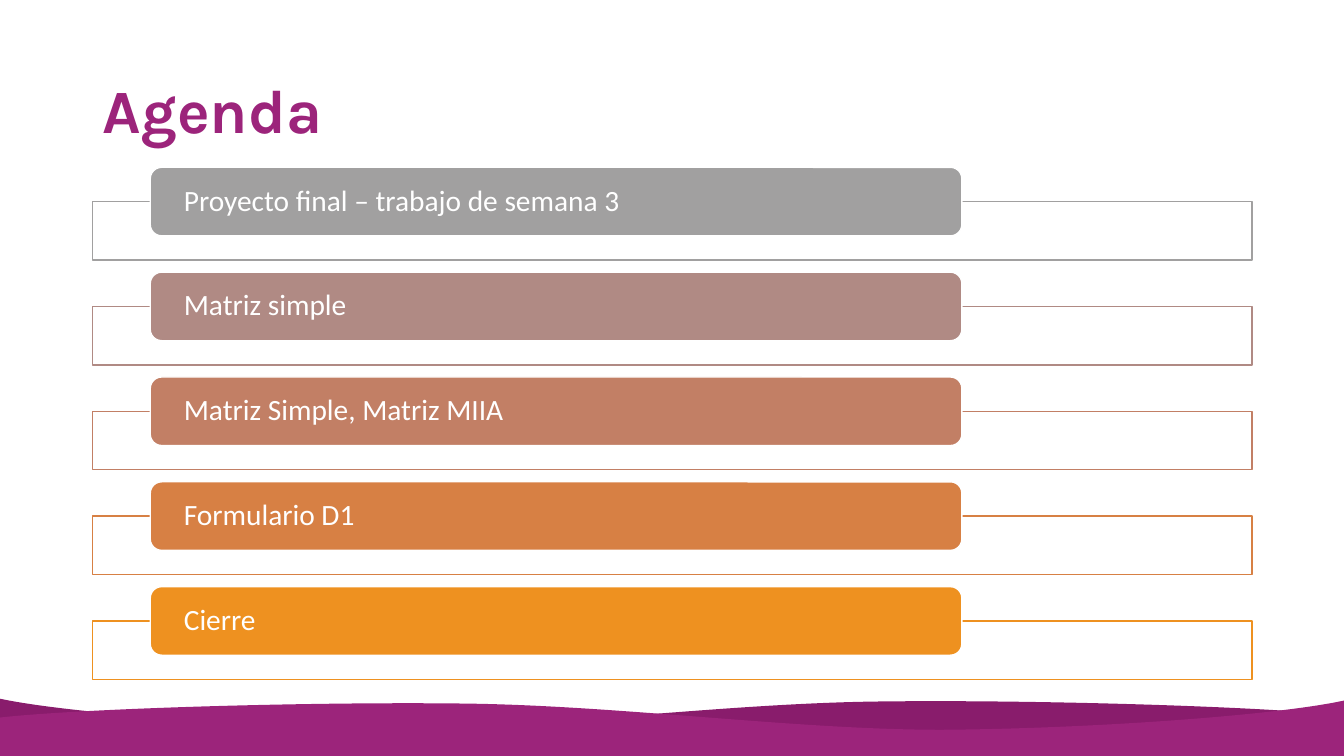
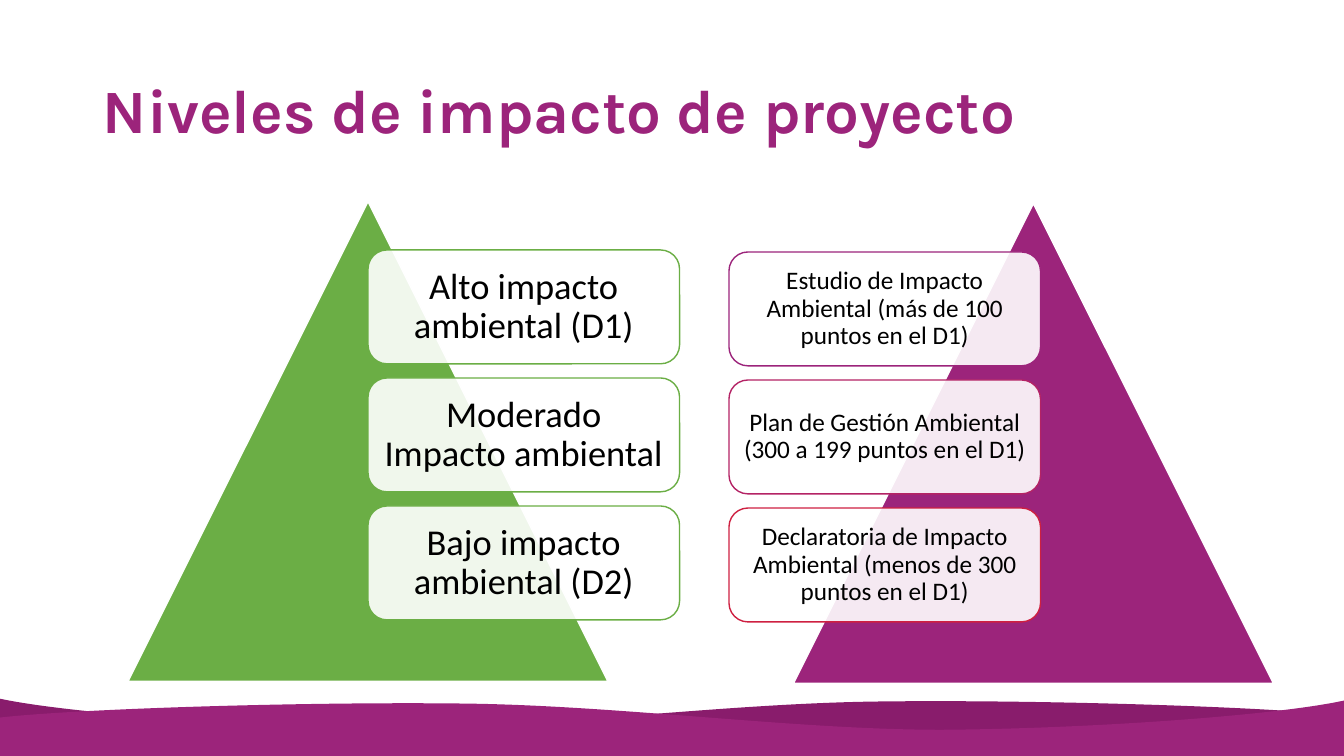
from dataclasses import dataclass

import lxml.etree
import pptx
import pptx.dml.color
import pptx.enum.shapes
import pptx.enum.text
import pptx.oxml.ns
import pptx.util

Inches = pptx.util.Inches
qn = pptx.oxml.ns.qn
SHAPE = pptx.enum.shapes.MSO_SHAPE
ALIGN = pptx.enum.text.PP_ALIGN


@dataclass(frozen=True)
class Theme:
    title_font: str = "Karla"
    body_font: str = "Calibri"
    title_size: int = 44
    agenda_size: int = 21
    level_size: int = 26
    study_size: int = 18
    purple: str = "9C247B"
    dark_purple: str = "891C6C"
    green: str = "6BAE45"
    white: str = "FFFFFF"
    black: str = "000000"


@dataclass(frozen=True)
class Item:
    text: str
    color: str


@dataclass(frozen=True)
class Pyramid:
    left: float
    top: float
    card_left: float
    color: str
    size: int
    margin: float
    cards: tuple[Item, ...]


THEME = Theme()
WIDTH, HEIGHT = 13.33, 7.5

WAVE = (
    (13.33, 7.1),
    (12.56, 7.01), (10.26, 6.94), (8.7, 6.96),
    (7.15, 6.98), (5.43, 7.22), (3.98, 7.22),
    (2.53, 7.21), (0.68, 7.08), (-0.01, 6.93),
    (-0.01, HEIGHT), (WIDTH, HEIGHT),
)
WAVE_CURVES = 3

AGENDA = (
    Item("Proyecto final – trabajo de semana 3", "A1A0A0"),
    Item("Matriz simple", "B08A84"),
    Item("Matriz Simple, Matriz MIIA", "C27F65"),
    Item("Formulario D1", "D78044"),
    Item("Cierre", "EE9120"),
)

PYRAMIDS = (
    Pyramid(1.27, 2, 3.65, THEME.green, THEME.level_size, 0.08, (
        Item("Alto impacto ambiental (D1)", THEME.green),
        Item("Moderado Impacto ambiental", THEME.green),
        Item("Bajo impacto ambiental (D2)", THEME.green),
    )),
    Pyramid(7.87, 2.02, 7.23, THEME.purple, THEME.study_size, 0.07, (
        Item("Estudio de Impacto Ambiental (más de 100 puntos en el D1)", THEME.purple),
        Item("Plan de Gestión Ambiental (300 a 199 puntos en el D1)", "B42365"),
        Item("Declaratoria de Impacto Ambiental (menos de 300 puntos en el D1)", "CE2041"),
    )),
)


def rgb(color: str) -> pptx.dml.color.RGBColor:
    return pptx.dml.color.RGBColor.from_string(color)


def write(sp, text: str, *, size: int, color: str, font: str = THEME.body_font,
          bold: bool = False, align=ALIGN.LEFT,
          margins: tuple[float, float] = (0.1, 0.05)) -> None:
    tf = sp.text_frame
    tf.word_wrap = True
    tf.auto_size = pptx.enum.text.MSO_AUTO_SIZE.NONE
    tf.vertical_anchor = pptx.enum.text.MSO_ANCHOR.MIDDLE
    tf.margin_left = tf.margin_right = Inches(margins[0])
    tf.margin_top = tf.margin_bottom = Inches(margins[1])
    p = tf.paragraphs[0]
    p.alignment = align
    p.line_spacing = 0.9
    r = p.add_run()
    r.text = text
    r.font.name = font
    r.font.size = pptx.util.Pt(size)
    r.font.bold = bold
    r.font.color.rgb = rgb(color)


def add_box(s, kind, left: float, top: float, width: float, height: float, *,
            fill: str, line: str, alpha: int = 100):
    sp = s.shapes.add_shape(kind, Inches(left), Inches(top), Inches(width), Inches(height))
    sp.shadow.inherit = False
    sp.fill.solid()
    sp.fill.fore_color.rgb = rgb(fill)
    sp.line.color.rgb = rgb(line)
    sp.line.width = pptx.util.Pt(1)
    if alpha < 100:
        clr = sp.element.spPr.find(qn("a:solidFill")).find(qn("a:srgbClr"))
        lxml.etree.SubElement(clr, qn("a:alpha")).set("val", str(alpha * 1000))
    return sp


def bend_segments(sp, controls: list[list[tuple[int, int]]]) -> None:
    segments = list(sp.element.iter(qn("a:lnTo")))
    for segment, pair in zip(segments, controls):
        curve = lxml.etree.Element(qn("a:cubicBezTo"))
        for x, y in pair:
            pt = lxml.etree.SubElement(curve, qn("a:pt"))
            pt.set("x", str(x - sp.left))
            pt.set("y", str(y - sp.top))
        curve.append(segment[0])
        segment.getparent().replace(segment, curve)


def add_waves(s, layout) -> None:
    front = [(WIDTH - 0.01 - x, min(y + 0.02, HEIGHT)) for x, y in WAVE]
    for points, color in ((WAVE, THEME.dark_purple), (front, THEME.purple)):
        pts = [(Inches(x), Inches(y)) for x, y in points]
        last = 3 * WAVE_CURVES
        builder = s.shapes.build_freeform(*pts[0], scale=1.0)
        builder.add_line_segments(pts[3:last + 1:3] + pts[last + 1:], close=True)
        sp = builder.convert_to_shape()
        bend_segments(sp, [pts[i:i + 2] for i in range(1, last, 3)])
        sp.shadow.inherit = False
        sp.fill.solid()
        sp.fill.fore_color.rgb = rgb(color)
        sp.line.fill.background()
        layout.shapes.element.append(sp.element)


def add_titled_slide(prs, layout, title: str):
    s = prs.slides.add_slide(layout)
    sp = s.shapes.title
    sp.left, sp.top, sp.width, sp.height = map(Inches, (0.92, 0.4, 11.5, 1.45))
    write(sp, title, size=THEME.title_size, color=THEME.purple,
          font=THEME.title_font, bold=True)
    return s


def add_agenda(s, items: tuple[Item, ...], top: float = 1.66, pitch: float = 1.04) -> None:
    for i, item in enumerate(items):
        y = top + i * pitch
        add_box(s, SHAPE.RECTANGLE, 0.92, y + 0.34, 11.5, 0.58,
                fill=THEME.white, line=item.color, alpha=90)
        bar = add_box(s, SHAPE.ROUNDED_RECTANGLE, 1.49, y, 8.05, 0.68,
                      fill=item.color, line=THEME.white)
        write(bar, item.text, size=THEME.agenda_size, color=THEME.white, margins=(0.3, 0))


def add_pyramid(s, pyramid: Pyramid, pitch: float = 1.27) -> None:
    add_box(s, SHAPE.ISOSCELES_TRIANGLE, pyramid.left, pyramid.top, 4.76, 4.76,
            fill=pyramid.color, line=THEME.white)
    for i, item in enumerate(pyramid.cards):
        card = add_box(s, SHAPE.ROUNDED_RECTANGLE, pyramid.card_left,
                       pyramid.top + 0.48 + i * pitch, 3.09, 1.13,
                       fill=THEME.white, line=item.color, alpha=90)
        write(card, item.text, size=pyramid.size, color=THEME.black, align=ALIGN.CENTER,
              margins=(pyramid.margin, pyramid.margin))


def main() -> None:
    prs = pptx.Presentation()
    prs.slide_width, prs.slide_height = Inches(WIDTH), Inches(HEIGHT)
    layout = prs.slide_layouts[5]

    s = add_titled_slide(prs, layout, "Agenda")
    add_waves(s, layout)
    add_agenda(s, AGENDA)

    s = add_titled_slide(prs, layout, "Niveles de impacto de proyecto")
    for pyramid in PYRAMIDS:
        add_pyramid(s, pyramid)

    prs.save("out.pptx")


if __name__ == "__main__":
    main()
